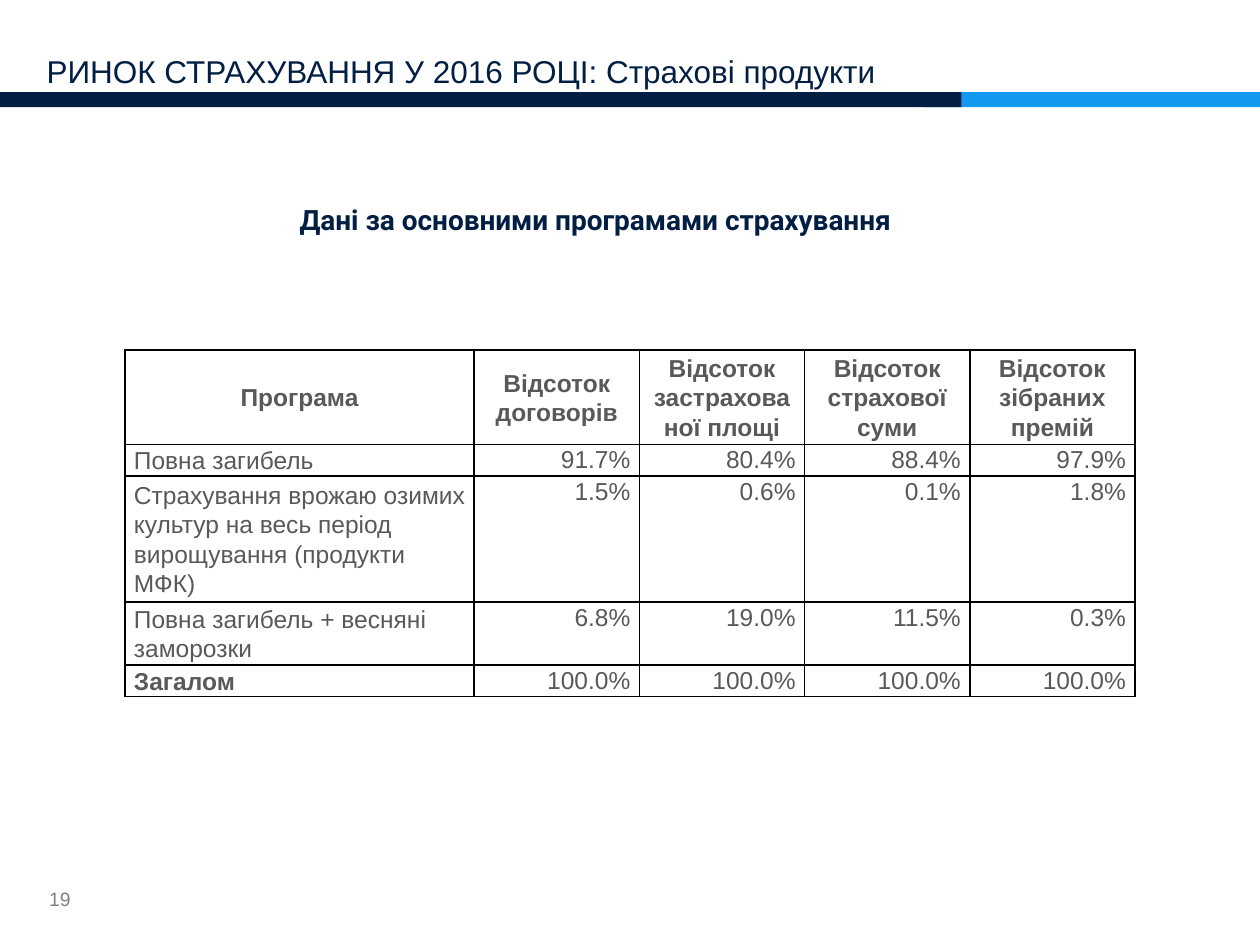
from dataclasses import dataclass

from lxml import etree
from pptx import Presentation
from pptx.dml.color import RGBColor
from pptx.enum.shapes import MSO_SHAPE
from pptx.enum.text import MSO_ANCHOR, PP_ALIGN
from pptx.oxml.ns import qn
from pptx.slide import Slide
from pptx.table import _Cell
from pptx.text.text import _Paragraph
from pptx.util import Cm, Pt

NAVY = RGBColor(0x02, 0x1F, 0x43)
BLUE = RGBColor(0x13, 0x9A, 0xF0)
GRAY = RGBColor(0x7F, 0x7F, 0x7F)
TEXT_GRAY = RGBColor(0x59, 0x59, 0x59)
BLACK = RGBColor(0, 0, 0)

RECTANGLE = MSO_SHAPE.RECTANGLE
TOP, MIDDLE, BOTTOM = MSO_ANCHOR.TOP, MSO_ANCHOR.MIDDLE, MSO_ANCHOR.BOTTOM
LEFT, CENTER, RIGHT = PP_ALIGN.LEFT, PP_ALIGN.CENTER, PP_ALIGN.RIGHT

BORDER_SIDES = ("a:lnL", "a:lnR", "a:lnT", "a:lnB")
BORDER_WIDTH = Pt(1)
TABLE_LEFT, TABLE_TOP = 2.52, 7.06
PROGRAM_WIDTH, SHARE_WIDTH = 7.04, 3.33
LINE_HEIGHT = 0.59
CELL_MARGIN = 0.18


@dataclass(frozen=True)
class Frame:
    left: float
    top: float
    width: float
    height: float

    def lengths(self) -> tuple[Cm, Cm, Cm, Cm]:
        return Cm(self.left), Cm(self.top), Cm(self.width), Cm(self.height)


@dataclass(frozen=True)
class Style:
    size: float
    color: RGBColor
    font: str = "Arial"
    bold: bool = False


@dataclass(frozen=True)
class Bar:
    frame: Frame
    color: RGBColor


@dataclass(frozen=True)
class Label:
    text: str
    frame: Frame
    style: Style
    anchor: MSO_ANCHOR
    margin_x: float = 0
    margin_y: float = 0


@dataclass(frozen=True)
class ProgramRow:
    cells: tuple[str, ...]
    lines: int
    bold_name: bool = False


BARS = (
    Bar(Frame(18.64, 1.86, 6.76, 0.3), BLUE),
    Bar(Frame(0, 1.86, 19.38, 0.3), NAVY),
)

LABELS = (
    Label("19", Frame(0.99, 17.63, 1.52, 0.99), Style(11, GRAY), MIDDLE),
    Label("РИНОК СТРАХУВАННЯ У 2016 РОЦІ: Страхові продукти",
          Frame(0.94, 0.64, 24.18, 1.17), Style(18, NAVY), BOTTOM),
    Label("Дані за основними програмами страхування",
          Frame(5.79, 3.96, 14.48, 0.94), Style(16, NAVY, "Roboto", True),
          TOP, 0.25, 0.13),
)

HEADER = ProgramRow(("Програма", "Відсоток договорів", "Відсоток застрахованої площі",
                     "Відсоток страхової суми", "Відсоток зібраних премій"), 3)
PROGRAMS = (
    ProgramRow(("Повна загибель", "91.7%", "80.4%", "88.4%", "97.9%"), 1),
    ProgramRow(("Страхування врожаю озимих культур на весь період вирощування (продукти МФК)",
                "1.5%", "0.6%", "0.1%", "1.8%"), 4),
    ProgramRow(("Повна загибель + весняні заморозки", "6.8%", "19.0%", "11.5%", "0.3%"), 2),
    ProgramRow(("Загалом", "100.0%", "100.0%", "100.0%", "100.0%"), 1, True),
)


def add_span(para: _Paragraph, text: str, style: Style) -> None:
    span = para.add_run()
    span.text = text
    span.font.name = style.font
    span.font.size = Pt(style.size)
    span.font.bold = style.bold
    span.font.color.rgb = style.color


def draw_bar(page: Slide, bar: Bar) -> None:
    shape = page.shapes.add_shape(RECTANGLE, *bar.frame.lengths())
    shape.shadow.inherit = False
    shape.fill.solid()
    shape.fill.fore_color.rgb = bar.color
    shape.line.fill.background()


def draw_label(page: Slide, label: Label) -> None:
    box = page.shapes.add_textbox(*label.frame.lengths()).text_frame
    box.word_wrap = True
    box.vertical_anchor = label.anchor
    box.margin_left = box.margin_right = Cm(label.margin_x)
    box.margin_top = box.margin_bottom = Cm(label.margin_y)
    add_span(box.paragraphs[0], label.text, label.style)


def add_borders(cell: _Cell) -> None:
    properties = cell._tc.get_or_add_tcPr()
    for index, side in enumerate(BORDER_SIDES):
        line = etree.Element(qn(side), w=str(BORDER_WIDTH))
        fill = etree.SubElement(line, qn("a:solidFill"))
        etree.SubElement(fill, qn("a:srgbClr"), val=str(BLACK))
        properties.insert(index, line)


def fill_cell(cell: _Cell, text: str, align: PP_ALIGN, anchor: MSO_ANCHOR, bold: bool) -> None:
    cell.fill.background()
    add_borders(cell)
    cell.margin_left = cell.margin_right = Cm(CELL_MARGIN)
    cell.margin_top = cell.margin_bottom = 0
    cell.vertical_anchor = anchor
    para = cell.text_frame.paragraphs[0]
    para.alignment = align
    para.line_spacing = 1.07
    add_span(para, text, Style(14, TEXT_GRAY, bold=bold))


def draw_table(page: Slide, header: ProgramRow, programs: tuple[ProgramRow, ...]) -> None:
    rows = (header, *programs)
    widths = [PROGRAM_WIDTH] + [SHARE_WIDTH] * (len(header.cells) - 1)
    height = LINE_HEIGHT * sum(row.lines for row in rows)
    frame = Frame(TABLE_LEFT, TABLE_TOP, sum(widths), height)
    table = page.shapes.add_table(len(rows), len(widths), *frame.lengths()).table
    table.first_row = table.horz_banding = False
    for column, width in zip(table.columns, widths):
        column.width = Cm(width)
    for row_index, row in enumerate(rows):
        table.rows[row_index].height = Cm(LINE_HEIGHT * row.lines)
        for column_index, text in enumerate(row.cells):
            cell = table.cell(row_index, column_index)
            if row is header:
                fill_cell(cell, text, CENTER, MIDDLE, True)
            elif column_index == 0:
                fill_cell(cell, text, LEFT, MIDDLE, row.bold_name)
            else:
                fill_cell(cell, text, RIGHT, TOP, False)


def main() -> None:
    deck = Presentation()
    deck.slide_width, deck.slide_height = Cm(25.4), Cm(19.05)
    page = deck.slides.add_slide(deck.slide_layouts[6])
    for bar in BARS:
        draw_bar(page, bar)
    for label in LABELS:
        draw_label(page, label)
    draw_table(page, HEADER, PROGRAMS)
    deck.save("out.pptx")


if __name__ == "__main__":
    main()
